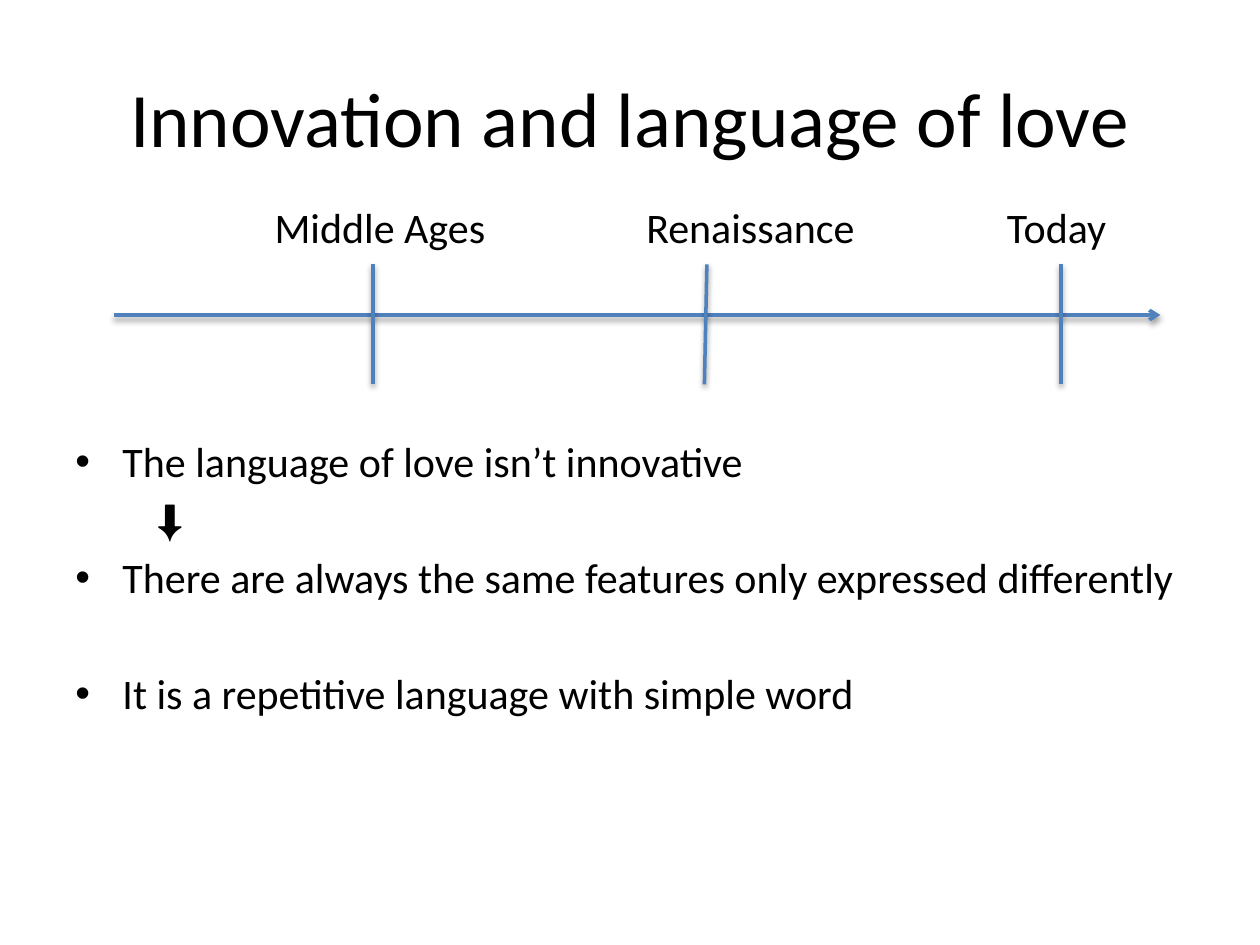
from pptx import Presentation
from pptx import util as u
from pptx.dml.color import RGBColor
from pptx.enum import shapes, text
from pptx.oxml import parse_xml
from pptx.oxml.ns import nsdecls

Cm, Pt = u.Cm, u.Pt
INK, BLUE = "000000", "4F81BD"


def paint(code):
    """Return the colour for a hex string."""
    return RGBColor.from_string(code)


def node(tag, attrs="", inner=""):
    """Return a drawing element with the given attributes and children."""
    return parse_xml(f"<a:{tag} {nsdecls('a')} {attrs}>{inner}</a:{tag}>")


def style(par, size):
    """Set the font of every run in a paragraph."""
    for run in par.runs:
        run.font.name = "Calibri"
        run.font.size = Pt(size)
        run.font.color.rgb = paint(INK)


def frame(slide, box):
    """Add a wrapping text box and return its text frame."""
    body = slide.shapes.add_textbox(*map(Cm, box)).text_frame
    body.word_wrap = True
    return body


def title(slide, box, words):
    """Place the centred heading in its box."""
    body = frame(slide, box)
    body.vertical_anchor = text.MSO_ANCHOR.MIDDLE
    par = body.paragraphs[0]
    par.text = words
    par.alignment = text.PP_ALIGN.CENTER
    style(par, 44)


def line(slide, start, end, arrow=False):
    """Draw a shadowed blue line, with an arrowhead if asked."""
    link = slide.shapes.add_connector(
        shapes.MSO_CONNECTOR.STRAIGHT, *map(Cm, (*start, *end)))
    link.line.color.rgb = paint(BLUE)
    link.line.width = Pt(2)
    if arrow:
        link.line._get_or_add_ln().append(node("tailEnd", 'type="arrow"'))
    link._element.spPr.append(node("effectLst", inner=(
        '<a:outerShdw blurRad="40000" dist="20000" dir="5400000" rotWithShape="0">'
        f'<a:srgbClr val="{INK}"><a:alpha val="38000"/></a:srgbClr></a:outerShdw>')))


def axis(slide, box, ticks):
    """Draw the time arrow and its ticks, each given as top and bottom offsets."""
    left, top, wide, high = box
    mid = top + 1.02
    line(slide, (left, mid), (left + wide, mid), arrow=True)
    for head, foot in ticks:
        line(slide, (left + head, top), (left + foot, top + high))


def body(slide, box, eras, tabs, points):
    """Write the era labels on centred tabs, then the points below."""
    area = frame(slide, box)
    par = area.paragraphs[0]
    par.text = "".join("\t" + era for era in eras)
    style(par, 24)
    stops = "".join(f'<a:tab pos="{Cm(tab)}" algn="ctr"/>' for tab in tabs)
    par._p.get_or_add_pPr().append(node("tabLst", inner=stops))
    for words, gap, bullet in points:
        par = area.add_paragraph()
        par.text = words
        par.space_before = Pt(gap)
        style(par, 24)
        props = par._p.get_or_add_pPr()
        props.set("marL", str(Cm(0.95 if bullet else 1.65)))
        if bullet:
            props.set("indent", str(-Cm(0.95)))
            props.append(node("buFont", 'typeface="Arial"'))
            props.append(node("buChar", 'char="•"'))
        else:
            par.runs[0].font.name = "Arial"


def main():
    """Build the slide and save it."""
    deck = Presentation()
    deck.slide_width, deck.slide_height = Cm(25.4), Cm(19.05)
    slide = deck.slides.add_slide(deck.slide_layouts[6])
    title(slide, (1.27, 0.76, 22.86, 3.18), "Innovation and language of love")
    body(slide, (1.27, 3.94, 22.86, 13.97),
         ("Middle Ages", "Renaissance", "Today"), (6.14, 13.61, 19.78),
         (("The language of love isn’t innovative", 105, True),
          ("⬇", 4.3, False),
          ("There are always the same features only expressed differently", 4.3, True),
          ("It is a repetitive language with simple word", 37.6, True)))
    axis(slide, (2.29, 5.33, 21.1, 2.42),
         ((5.23, 5.23), (11.96, 11.91), (19.1, 19.1)))
    deck.save("out.pptx")


if __name__ == "__main__":
    main()
